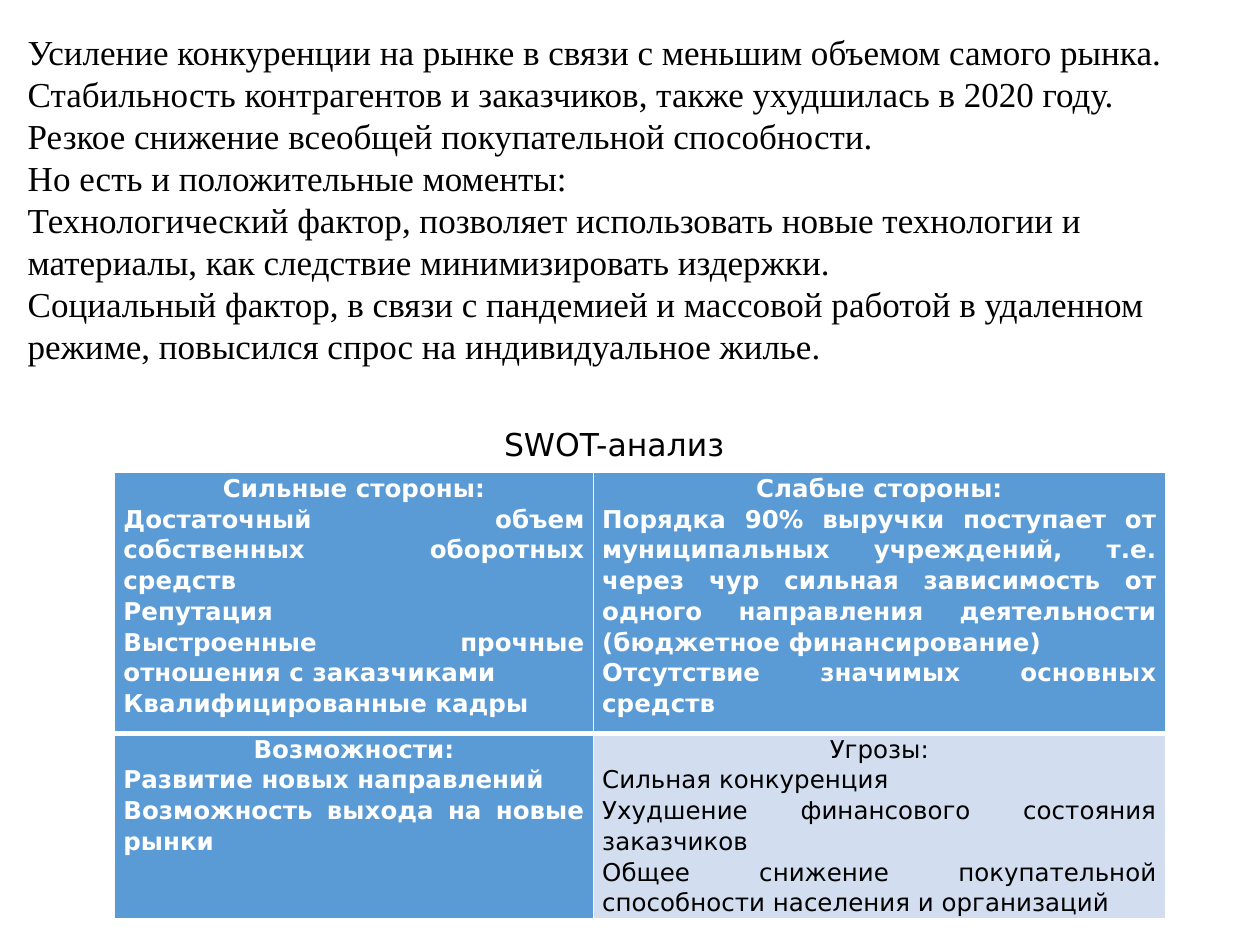
from lxml.etree import SubElement
from pptx import Presentation
from pptx.dml.color import RGBColor
from pptx.enum.text import MSO_ANCHOR, MSO_AUTO_SIZE, PP_ALIGN
from pptx.oxml.ns import qn
from pptx.util import Inches, Pt

SERIF, SANS = "Times New Roman", "DejaVu Sans"
BLACK, WHITE, BLUE, PALE = "000000", "FFFFFF", "5B9BD5", "D2DEEF"

INTRO = [
    "Усиление конкуренции на рынке в связи с меньшим объемом самого рынка.",
    "Стабильность контрагентов и заказчиков, также ухудшилась в 2020 году.",
    "Резкое снижение всеобщей покупательной способности.",
    "Но есть и положительные моменты:",
    "Технологический фактор, позволяет использовать новые технологии и "
    "материалы, как следствие минимизировать издержки.",
    "Социальный фактор, в связи с пандемией и массовой работой в удаленном "
    "режиме, повысился спрос на индивидуальное жилье.",
]

# Each cell holds its heading, then its points
SWOT = [
    [
        ["Сильные стороны:",
         "Достаточный объем собственных оборотных средств",
         "Репутация",
         "Выстроенные прочные отношения с заказчиками",
         "Квалифицированные кадры"],
        ["Слабые стороны:",
         "Порядка 90% выручки поступает от муниципальных учреждений, т.е. "
         "через чур сильная зависимость от одного направления деятельности "
         "(бюджетное финансирование)",
         "Отсутствие значимых основных средств"],
    ],
    [
        ["Возможности:",
         "Развитие новых направлений",
         "Возможность выхода на новые рынки"],
        ["Угрозы:",
         "Сильная конкуренция",
         "Ухудшение финансового состояния заказчиков",
         "Общее снижение покупательной способности населения и организаций"],
    ],
]


def color(code):
    return RGBColor.from_string(code)


class Deck:
    def __init__(self, wide, high):
        self.prs = Presentation()
        self.prs.slide_width = Inches(wide)
        self.prs.slide_height = Inches(high)
        self.slide = self.prs.slides.add_slide(self.prs.slide_layouts[1])

    def lines(self, frame, texts, font, size, ink=BLACK, bold=False):
        for i, text in enumerate(texts):
            para = frame.paragraphs[0] if i == 0 else frame.add_paragraph()
            para.text = text
            para.font.name, para.font.size = font, Pt(size)
            para.font.bold = bold
            para.font.color.rgb = color(ink)
        return frame.paragraphs

    def fill(self, shape, box, texts, font, size):
        """Place a placeholder and set plain left-aligned lines in it."""
        shape.left, shape.top, shape.width, shape.height = map(Inches, box)
        frame = shape.text_frame
        frame.word_wrap = True
        frame.auto_size = MSO_AUTO_SIZE.NONE
        frame.vertical_anchor = MSO_ANCHOR.TOP
        for para in self.lines(frame, texts, font, size):
            para.alignment = PP_ALIGN.LEFT
            para.space_before = Pt(0)
            props = para._p.get_or_add_pPr()
            props.set("marL", "0")
            props.set("indent", "0")
            SubElement(props, qn("a:buNone"))

    def title(self, box, text, font, size):
        self.fill(self.slide.shapes.title, box, [text], font, size)

    def body(self, box, texts, font, size):
        self.fill(self.slide.placeholders[1], box, texts, font, size)

    def table(self, box, cols, rows, data):
        grid = self.slide.shapes.add_table(
            len(rows), len(cols), *map(Inches, box)).table
        for col, wide in zip(grid.columns, cols):
            col.width = Inches(wide)
        for row, high in zip(grid.rows, rows):
            row.height = Inches(high)
        for r, line in enumerate(data):
            for c, texts in enumerate(line):
                self.cell(grid.cell(r, c), texts, r == 0 or c == 0,
                          top=3 if r else 1, foot=1 if r else 3)

    def cell(self, cell, texts, strong, top, foot):
        cell.margin_left = cell.margin_right = Inches(0.07)
        cell.margin_top = cell.margin_bottom = 0
        paras = self.lines(cell.text_frame, texts, SANS, 14,
                           WHITE if strong else BLACK, strong)
        for i, para in enumerate(paras):
            para.alignment = PP_ALIGN.JUSTIFY if i else PP_ALIGN.CENTER
            para.line_spacing = 1.07
        # Borders come before the fill in the cell properties
        props = cell._tc.get_or_add_tcPr()
        for side, width in zip("LRTB", (1, 1, top, foot)):
            edge = SubElement(props, qn(f"a:ln{side}"), w=str(Pt(width)))
            paint = SubElement(edge, qn("a:solidFill"))
            SubElement(paint, qn("a:srgbClr"), val=WHITE)
        cell.fill.solid()
        cell.fill.fore_color.rgb = color(BLUE if strong else PALE)


def main():
    deck = Deck(10, 7.5)
    # Market factors
    deck.body((0.12, 0.19, 9.76, 3.1), INTRO, SERIF, 20)
    # SWOT matrix under its title
    deck.table((0.91, 3.75, 8.34, 3.54), (3.8, 4.54), (2.07, 1.47), SWOT)
    deck.title((3.9, 3.32, 1.98, 0.4), "SWOT-анализ", SANS, 18)
    deck.prs.save("out.pptx")


if __name__ == "__main__":
    main()
